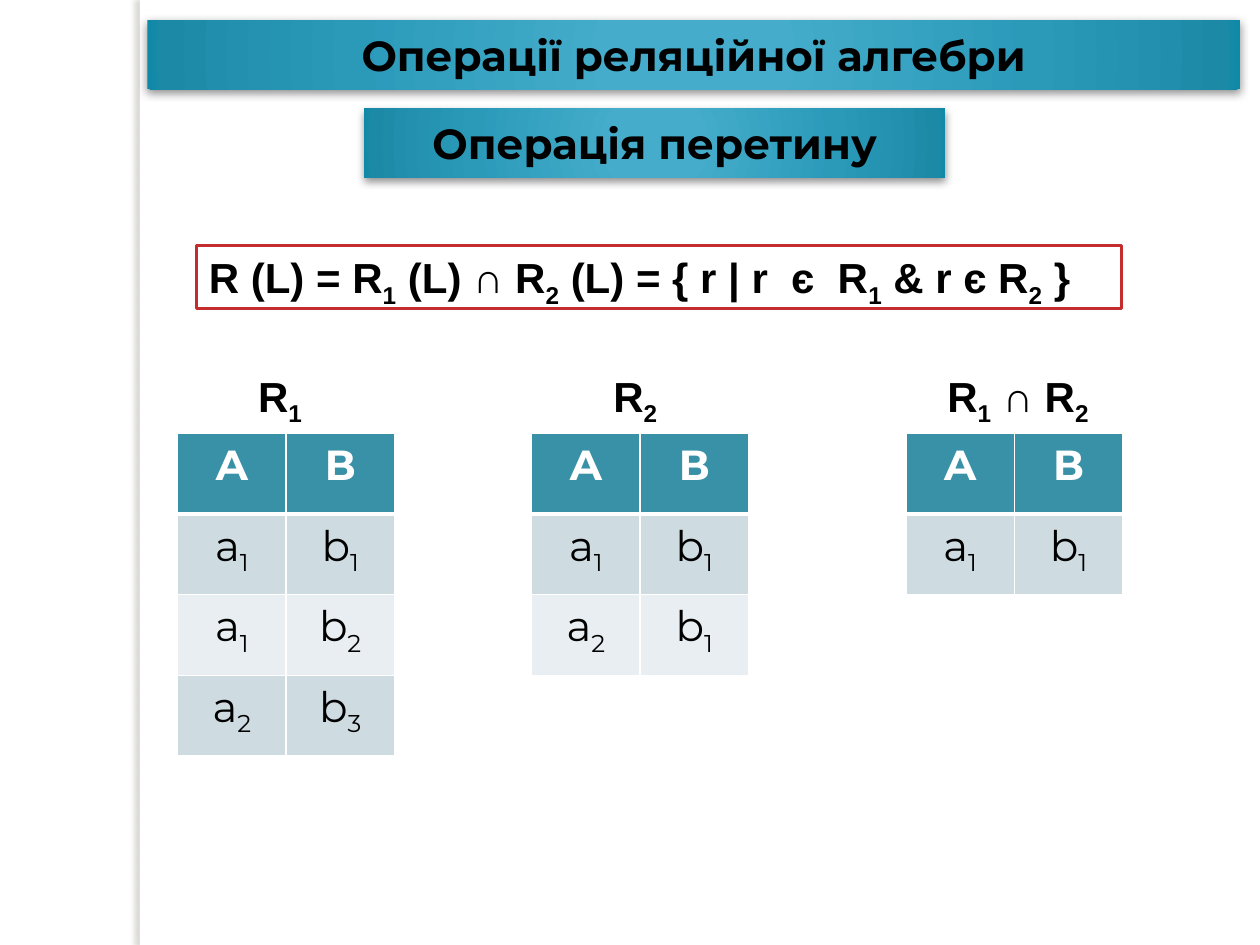
from lxml.etree import SubElement
from pptx import Presentation
from pptx.dml.color import RGBColor
from pptx.enum.shapes import MSO_SHAPE
from pptx.enum.text import MSO_ANCHOR, MSO_AUTO_SIZE, PP_ALIGN
from pptx.oxml.ns import qn
from pptx.util import Inches, Pt

BLACK = RGBColor(0x00, 0x00, 0x00)
WHITE = RGBColor(0xFF, 0xFF, 0xFF)
RED = RGBColor(0xC3, 0x2D, 0x2E)
HEADER = RGBColor(0x38, 0x91, 0xA7)
BANDS = (RGBColor(0xCE, 0xDC, 0xE1), RGBColor(0xE8, 0xEE, 0xF1))
EDGE_SHADOW = RGBColor(0x73, 0x6F, 0x63)
BANNER_STOPS = (
    (0, RGBColor(0x45, 0xAC, 0xCC)),
    (15, RGBColor(0x45, 0xAC, 0xCB)),
    (62, RGBColor(0x2B, 0x9A, 0xB9)),
    (97, RGBColor(0x1C, 0x8A, 0xA7)),
    (100, RGBColor(0x0E, 0x89, 0xA7)),
)
COLUMN_WIDTH, ROW_HEIGHT = 0.86, 0.64


def add(parent, tag, **attrs):
    return SubElement(parent, qn(tag), {k: str(v) for k, v in attrs.items()})


def write(tf, text, font, color=BLACK, bold=True, align=PP_ALIGN.LEFT):
    """Write one paragraph; the character after each "_" is a subscript."""
    p = tf.paragraphs[0]
    p.alignment = align
    first, *rest = text.split("_")
    pieces = [(first, False)]
    for part in rest:
        pieces += [(part[0], True), (part[1:], False)]
    for piece, subscript in pieces:
        if not piece:
            continue
        r = p.add_run()
        r.text = piece
        r.font.name, r.font.size = font, Pt(24)
        r.font.bold, r.font.color.rgb = bold, color
        if subscript:
            r._r.get_or_add_rPr().set("baseline", "-25000")


def add_box(slide, x, y, w, h):
    sp = slide.shapes.add_shape(
        MSO_SHAPE.RECTANGLE, Inches(x), Inches(y), Inches(w), Inches(h))
    sp.shadow.inherit = False
    sp.fill.solid()
    sp.fill.fore_color.rgb = WHITE
    sp.line.fill.background()
    return sp


def add_shadow(sp, color, alpha, blur, dist, angle):
    effects = sp._element.spPr.find(qn("a:effectLst"))
    shadow = add(effects, "a:outerShdw", blurRad=Pt(blur), dist=Pt(dist),
                 dir=angle * 60000, algn="ctr", rotWithShape=0)
    add(add(shadow, "a:srgbClr", val=color), "a:alpha", val=alpha * 1000)


def add_side_edge(slide, x, y, w, h):
    add_shadow(add_box(slide, x, y, w, h), EDGE_SHADOW, 25, 3, 3, 180)


def add_banner(slide, x, y, w, h, text):
    sp = add_box(slide, x, y, w, h)
    # Radial gradient from the centre
    sp.fill.gradient()
    grad = sp._element.spPr.find(qn("a:gradFill"))
    for child in list(grad):
        grad.remove(child)
    stops = add(grad, "a:gsLst")
    for pos, color in BANNER_STOPS:
        add(add(stops, "a:gs", pos=pos * 1000), "a:srgbClr", val=color)
    radial = add(grad, "a:path", path="circle")
    add(radial, "a:fillToRect", l=50000, t=50000, r=50000, b=50000)
    add_shadow(sp, BLACK, 43, 5, 2, 90)
    sp.text_frame.vertical_anchor = MSO_ANCHOR.MIDDLE
    write(sp.text_frame, text, "Montserrat", align=PP_ALIGN.CENTER)


def add_formula(slide, x, y, w, h, text):
    sp = add_box(slide, x, y, w, h)
    sp.line.color.rgb = RED
    sp.line.width = Pt(2)
    sp.text_frame.vertical_anchor = MSO_ANCHOR.TOP
    write(sp.text_frame, text, "Arial")


def add_label(slide, x, y, w, h, text):
    tb = slide.shapes.add_textbox(Inches(x), Inches(y), Inches(w), Inches(h))
    tf = tb.text_frame
    tf.word_wrap = False
    tf.auto_size = MSO_AUTO_SIZE.SHAPE_TO_FIT_TEXT
    write(tf, text, "Arial")


def set_borders(cell, bottom):
    tc_pr = cell._tc.get_or_add_tcPr()
    for side, width in (("L", 1), ("R", 1), ("T", 1), ("B", bottom)):
        ln = add(tc_pr, f"a:ln{side}", w=Pt(width))
        add(add(ln, "a:solidFill"), "a:srgbClr", val=WHITE)


def add_relation(slide, x, y, tuples):
    rows = [("А", "В"), *tuples]
    table = slide.shapes.add_table(
        len(rows), 2, Inches(x), Inches(y),
        Inches(2 * COLUMN_WIDTH), Inches(len(rows) * ROW_HEIGHT)).table
    for column in table.columns:
        column.width = Inches(COLUMN_WIDTH)
    for i, values in enumerate(rows):
        header = i == 0
        table.rows[i].height = Inches(ROW_HEIGHT)
        for j, value in enumerate(values):
            cell = table.cell(i, j)
            set_borders(cell, 3 if header else 1)
            cell.fill.solid()
            cell.fill.fore_color.rgb = HEADER if header else BANDS[(i - 1) % 2]
            write(cell.text_frame, value, "Montserrat",
                  WHITE if header else BLACK, header, PP_ALIGN.CENTER)


def main():
    prs = Presentation()
    prs.slide_width, prs.slide_height = Inches(10), Inches(7.5)
    slide = prs.slides.add_slide(prs.slide_layouts[6])

    # Side edge and headings
    add_side_edge(slide, 1.11, 0, 0.08, 7.5)
    add_banner(slide, 1.17, 0.16, 8.67, 0.55, "Операції реляційної алгебри")
    add_banner(slide, 2.89, 0.86, 4.61, 0.55, "Операція перетину")

    # Definition of the intersection
    add_formula(slide, 1.56, 1.95, 7.34, 0.5,
                "R (L) = R_1 (L) ∩ R_2 (L) = { r | r  є  R_1 & r є R_2 }")

    # Relations: table left, label left, label width, label, tuples
    relations = (
        (1.41, 1.95, 0.57, "R_1",
         [("a_1", "b_1"), ("a_1", "b_2"), ("a_2", "b_3")]),
        (4.22, 4.77, 0.57, "R_2", [("a_1", "b_1"), ("a_2", "b_1")]),
        (7.19, 7.42, 1.46, "R_1 ∩ R_2", [("a_1", "b_1")]),
    )
    for x, label_x, label_w, label, tuples in relations:
        add_relation(slide, x, 3.44, tuples)
        add_label(slide, label_x, 2.89, label_w, 0.5, label)

    prs.save("out.pptx")


if __name__ == "__main__":
    main()
